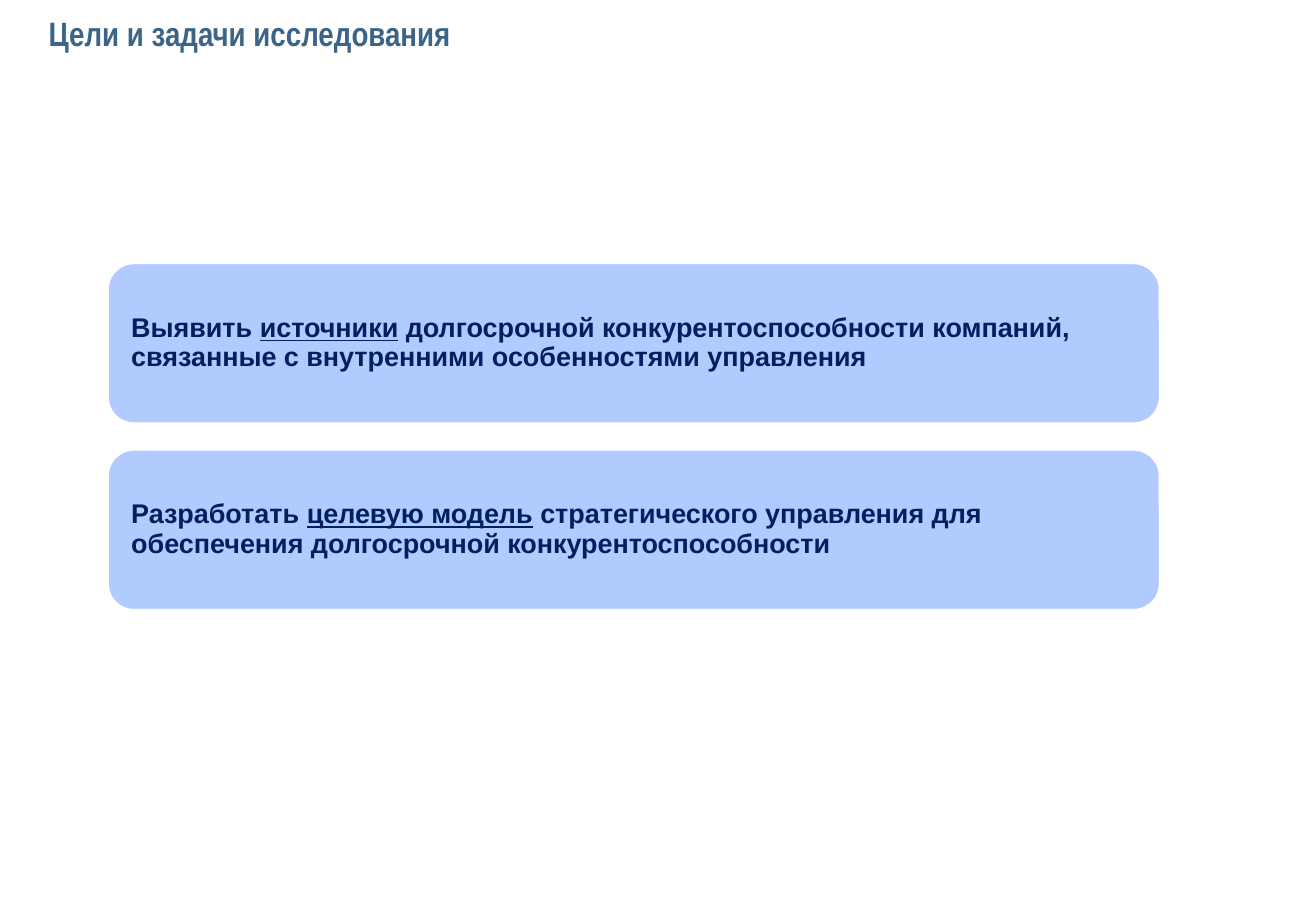
from lxml import etree
from pptx import Presentation
from pptx.dml.color import RGBColor
from pptx.enum.shapes import MSO_SHAPE
from pptx.enum.text import MSO_ANCHOR, MSO_AUTO_SIZE, PP_ALIGN
from pptx.oxml.ns import qn
from pptx.util import Cm, Pt

ROUND = MSO_SHAPE.ROUNDED_RECTANGLE
MIDDLE = MSO_ANCHOR.MIDDLE
LEFT = PP_ALIGN.LEFT
NO_FIT = MSO_AUTO_SIZE.NONE


def color(code):
    return RGBColor.from_string(code)


class Deck:
    head_font, body_font = "Arial Narrow", "Arial"
    head_ink, body_ink = "3B6487", "002060"
    panel, edge = "6699FF", "FFFFFF"

    def __init__(self, wide, high):
        self.prs = Presentation()
        self.prs.slide_width, self.prs.slide_height = Cm(wide), Cm(high)
        self.slide = self.prs.slides.add_slide(self.prs.slide_layouts[5])

    def label(self, shape, parts, font, size, ink):
        """Fill a shape with bold text; each part is (text, underlined)."""
        frame = shape.text_frame
        frame.word_wrap = True
        frame.auto_size = NO_FIT
        frame.vertical_anchor = MIDDLE
        para = frame.paragraphs[0]
        para.alignment = LEFT
        for text, under in parts:
            run = para.add_run()
            run.text = text
            run.font.name = font
            run.font.size = Pt(size)
            run.font.bold = True
            run.font.underline = under
            run.font.color.rgb = color(ink)
        return frame

    def title(self, text, x, y, w, h):
        head = self.slide.shapes.title
        head.left, head.top, head.width, head.height = map(Cm, (x, y, w, h))
        self.label(head, [(text, False)], self.head_font, 20, self.head_ink)

    def card(self, parts, x, y, w, h):
        box = self.slide.shapes.add_shape(ROUND, *map(Cm, (x, y, w, h)))
        box.shadow.inherit = False
        box.fill.solid()
        box.fill.fore_color.rgb = color(self.panel)
        box.line.color.rgb = color(self.edge)
        box.line.width = Pt(2)
        # Half-transparent fill
        tint = box.element.spPr.find(qn("a:solidFill"))[0]
        etree.SubElement(tint, qn("a:alpha")).set("val", "50000")
        frame = self.label(box, parts, self.body_font, 16, self.body_ink)
        frame.margin_left = frame.margin_right = Cm(0.34)
        frame.paragraphs[0].line_spacing = 0.9


GOALS = [
    [("Выявить ", False), ("источники", True),
     (" долгосрочной конкурентоспособности компаний, связанные с "
      "внутренними особенностями управления", False)],
    [("Разработать ", False), ("целевую модель", True),
     (" стратегического управления для обеспечения долгосрочной "
      "конкурентоспособности", False)],
]


def main():
    deck = Deck(27.51, 19.05)

    # Heading
    deck.title("Цели и задачи исследования", 0.76, 0.05, 23.34, 1.3)

    # Goal cards
    top, step = 5.49, 3.9
    for i, parts in enumerate(GOALS):
        deck.card(parts, 2.24, top + i * step, 22.02, 3.38)

    deck.prs.save("out.pptx")


if __name__ == "__main__":
    main()
